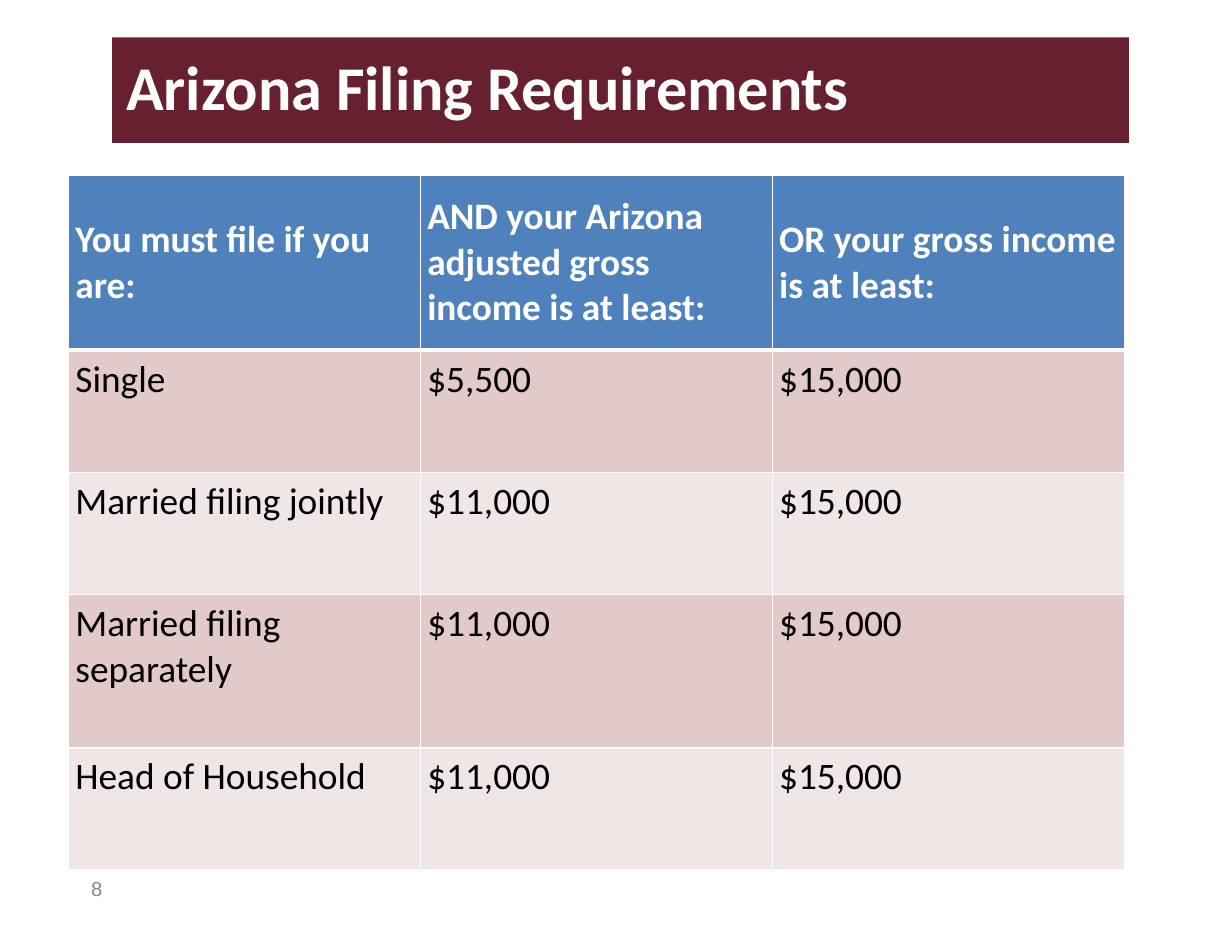
from pptx import Presentation
from pptx.dml.color import RGBColor
from pptx.enum.text import MSO_ANCHOR as Anchor, MSO_AUTO_SIZE as AutoSize, PP_ALIGN as Align
from pptx.oxml.ns import qn
from pptx.util import Cm, Pt
from lxml.etree import SubElement

MAROON, BLUE, WHITE, BLACK, GREY = "67202F", "4F81BD", "FFFFFF", "000000", "888888"
BANDS = ["E2CACA", "F1E6E6"]
INSET = Cm(0.15)

HEADINGS = [
    "You must file if you are:",
    "AND your Arizona adjusted gross income is at least:",
    "OR your gross income is at least:",
]
THRESHOLDS = [
    ["Single", "$5,500", "$15,000"],
    ["Married filing jointly", "$11,000", "$15,000"],
    ["Married filing separately", "$11,000", "$15,000"],
    ["Head of Household", "$11,000", "$15,000"],
]
ROW_HEIGHTS = [3.97, 2.77, 2.77, 3.48, 2.77]


def colour(hex_code):
    return RGBColor.from_string(hex_code)


def set_insets(holder):
    holder.margin_left = holder.margin_right = INSET
    holder.margin_top = holder.margin_bottom = INSET


def add_span(para, text, size, hex_code, font="Calibri", bold=False):
    span = para.add_run()
    span.text = text
    span.font.name = font
    span.font.size = Pt(size)
    span.font.bold = bold
    span.font.color.rgb = colour(hex_code)


def set_borders(cell, bottom):
    """Draw white cell borders; the outline elements must precede the fill."""
    properties = cell._tc.get_or_add_tcPr()
    for index, side in enumerate(["lnL", "lnR", "lnT", "lnB"]):
        width = bottom if side == "lnB" else 1
        line = SubElement(properties, qn(f"a:{side}"), w=str(Pt(width)))
        fill = SubElement(line, qn("a:solidFill"))
        SubElement(fill, qn("a:srgbClr"), val=WHITE)
        properties.insert(index, line)


def place_title(page, left, top, width, height):
    title = page.shapes.title
    title.left, title.top, title.width, title.height = left, top, width, height
    title.fill.solid()
    title.fill.fore_color.rgb = colour(MAROON)
    frame = title.text_frame
    frame.word_wrap = True
    frame.auto_size = AutoSize.NONE
    frame.vertical_anchor = Anchor.MIDDLE
    set_insets(frame)
    para = frame.paragraphs[0]
    para.alignment = Align.LEFT
    para.line_spacing = 0.9
    para._p.get_or_add_pPr().set("indent", str(Cm(0.17)))
    add_span(para, "Arizona Filing Requirements", 40, WHITE, bold=True)


def place_table(page, left, top, width, height):
    rows = [HEADINGS] + THRESHOLDS
    table = page.shapes.add_table(len(rows), len(HEADINGS), left, top, width, height).table
    for column in table.columns:
        column.width = width // len(HEADINGS)
    for row_index, texts in enumerate(rows):
        table.rows[row_index].height = Cm(ROW_HEIGHTS[row_index])
        is_header = row_index == 0
        for column_index, text in enumerate(texts):
            cell = table.cell(row_index, column_index)
            set_insets(cell)
            cell.vertical_anchor = Anchor.MIDDLE if is_header else Anchor.TOP
            cell.fill.solid()
            cell.fill.fore_color.rgb = colour(BLUE if is_header else BANDS[(row_index - 1) % 2])
            set_borders(cell, bottom=3 if is_header else 1)
            add_span(cell.text_frame.paragraphs[0], text, 24,
                     WHITE if is_header else BLACK, bold=is_header)


def place_page_number(page, left, top, width, height):
    box = page.shapes.add_textbox(left, top, width, height)
    frame = box.text_frame
    frame.word_wrap = False
    frame.auto_size = AutoSize.SHAPE_TO_FIT_TEXT
    frame.vertical_anchor = Anchor.MIDDLE
    set_insets(frame)
    add_span(frame.paragraphs[0], "8", 13, GREY, font="Arial")


def main():
    deck = Presentation()
    deck.slide_width, deck.slide_height = Cm(27.94), Cm(21.59)
    page = deck.slides.add_slide(deck.slide_layouts[5])

    # Title band
    place_title(page, Cm(2.54), Cm(0.85), Cm(23.06), Cm(2.39))
    # Page number
    place_page_number(page, Cm(1.92), Cm(19.73), Cm(0.55), Cm(0.82))
    # Filing thresholds
    place_table(page, Cm(1.56), Cm(3.97), Cm(23.94), Cm(sum(ROW_HEIGHTS)))

    deck.save("out.pptx")


if __name__ == "__main__":
    main()
